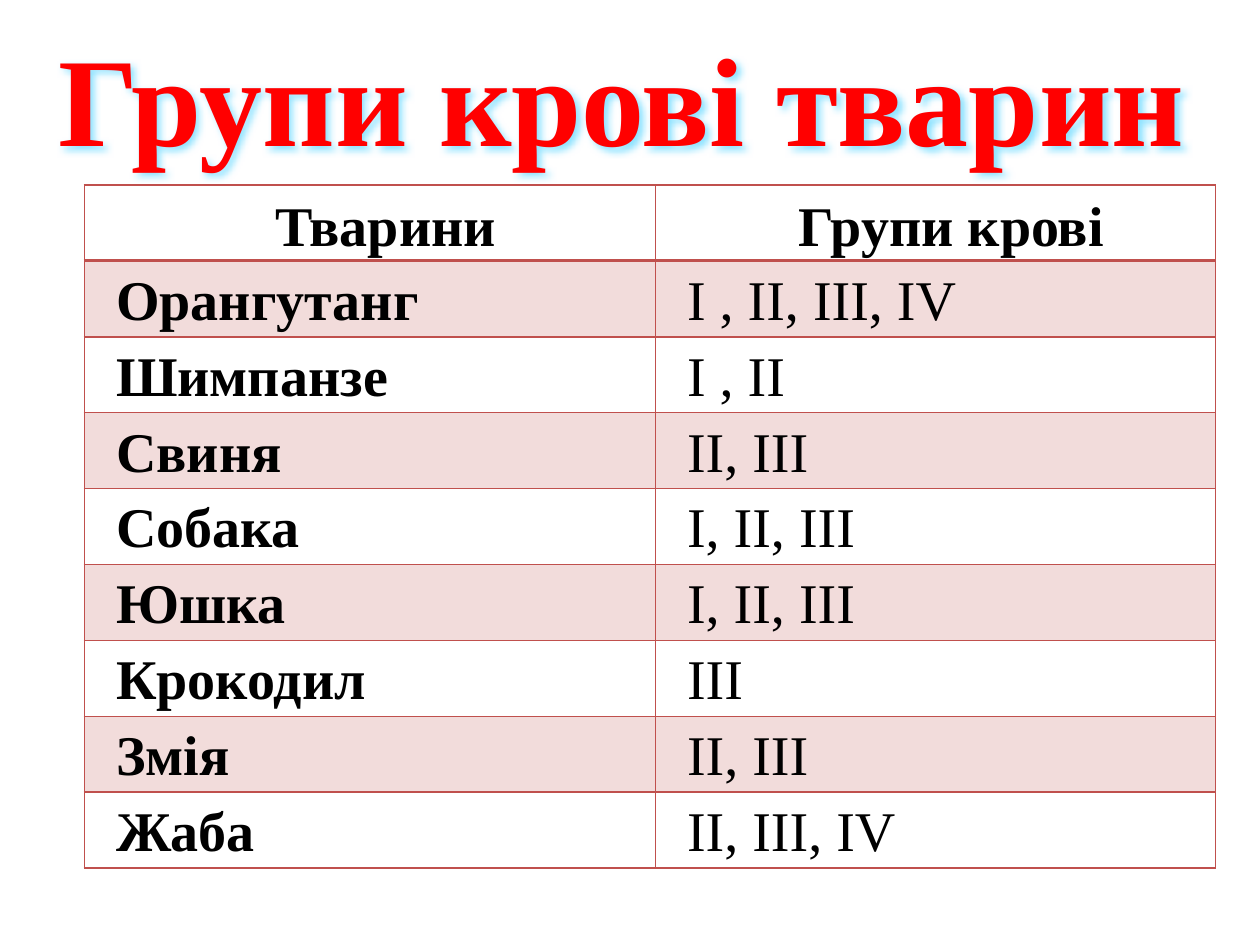
from lxml import etree
from pptx import Presentation
from pptx.dml.color import RGBColor
from pptx.enum.text import MSO_ANCHOR, PP_ALIGN
from pptx.oxml.ns import qn
from pptx.util import Cm, Pt

CENTER, JUSTIFY = PP_ALIGN.CENTER, PP_ALIGN.JUSTIFY
MIDDLE, TOP = MSO_ANCHOR.MIDDLE, MSO_ANCHOR.TOP
TITLE_ONLY = 5

HEADER = ("Тварини", "Групи крові")
ANIMALS = [
    ("Орангутанг", "І , II, III, IV"),
    ("Шимпанзе", "І , II "),
    ("Свиня", "II, III"),
    ("Собака", "I, II, III"),
    ("Юшка", "I, II, III"),
    ("Крокодил", "III"),
    ("Змія", "II, III"),
    ("Жаба", "II, III, IV"),
]


def rgb(color):
    return RGBColor.from_string(color)


def add_xml(parent, tag, **attrs):
    return etree.SubElement(parent, qn(tag), {k: str(v) for k, v in attrs.items()})


class SlideBuilder:
    font = "Times New Roman"
    title_color = "FF0000"
    glow_color = "8FE3FF"
    text_color = "000000"
    accent = "C0504D"

    def __init__(self, slide):
        self.s = slide

    def style(self, p, size, color, bold, align):
        p.alignment = align
        p.font.name = self.font
        p.font.size = Pt(size)
        p.font.bold = bold
        p.font.color.rgb = rgb(color)

    def title(self, text, left, top, width, height):
        sp = self.s.shapes.title
        sp.left, sp.top, sp.width, sp.height = Cm(left), Cm(top), Cm(width), Cm(height)
        tf = sp.text_frame
        tf.text = text
        tf.word_wrap = True
        tf.vertical_anchor = MIDDLE
        self.style(tf.paragraphs[0], 72, self.title_color, True, CENTER)
        # Soft light-blue shadow behind the letters
        effects = add_xml(sp._element.spPr, "a:effectLst")
        shadow = add_xml(effects, "a:outerShdw", blurRad=Pt(4), dist=Pt(2),
                         dir=2700000, algn="tl", rotWithShape=0)
        add_xml(shadow, "a:srgbClr", val=self.glow_color)

    def borders(self, cell, top, bottom):
        tc_pr = cell._tc.get_or_add_tcPr()
        for side, width in (("L", 1), ("R", 1), ("T", top), ("B", bottom)):
            ln = add_xml(tc_pr, f"a:ln{side}", w=Pt(width))
            add_xml(add_xml(ln, "a:solidFill"), "a:srgbClr", val=self.accent)

    def tint(self, cell):
        cell.fill.solid()
        cell.fill.fore_color.rgb = rgb(self.accent)
        color = cell._tc.tcPr.find(qn("a:solidFill")).find(qn("a:srgbClr"))
        add_xml(color, "a:alpha", val=20000)

    def cell(self, cell, text, row, col):
        header = row == 0
        cell.text = text
        cell.margin_left = cell.margin_right = cell.margin_top = cell.margin_bottom = 0
        cell.vertical_anchor = MIDDLE if header else TOP
        p = cell.text_frame.paragraphs[0]
        self.style(p, 32, self.text_color, header or col == 0,
                   CENTER if header else JUSTIFY)
        p.line_spacing = 1.15
        p.space_after = Pt(10)
        p_pr = p._p.get_or_add_pPr()
        p_pr.set("marL", "0")
        p_pr.set("indent", str(Cm(0.64)))
        self.borders(cell, top=2 if row == 1 else 1, bottom=2 if header else 1)
        if row % 2:
            self.tint(cell)
        else:
            cell.fill.background()

    def table(self, rows, left, top, col_widths, row_height):
        frame = self.s.shapes.add_table(
            len(rows), len(col_widths), Cm(left), Cm(top),
            Cm(sum(col_widths)), Cm(row_height * len(rows)))
        table = frame.table
        table.first_row = table.horz_banding = False
        for col, width in zip(table.columns, col_widths):
            col.width = Cm(width)
        for r, texts in enumerate(rows):
            table.rows[r].height = Cm(row_height)
            for c, text in enumerate(texts):
                self.cell(table.cell(r, c), text, r, c)


def main():
    prs = Presentation()
    prs.slide_width, prs.slide_height = Cm(25.4), Cm(19.05)
    builder = SlideBuilder(prs.slides.add_slide(prs.slide_layouts[TITLE_ONLY]))

    # Heading
    builder.title("Групи крові тварин ", 0.71, 1.12, 24.28, 1.65)

    # Animals and their blood groups
    builder.table([HEADER] + ANIMALS, 1.7, 3.73, (11.51, 11.29), 1.53)

    prs.save("out.pptx")


if __name__ == "__main__":
    main()
